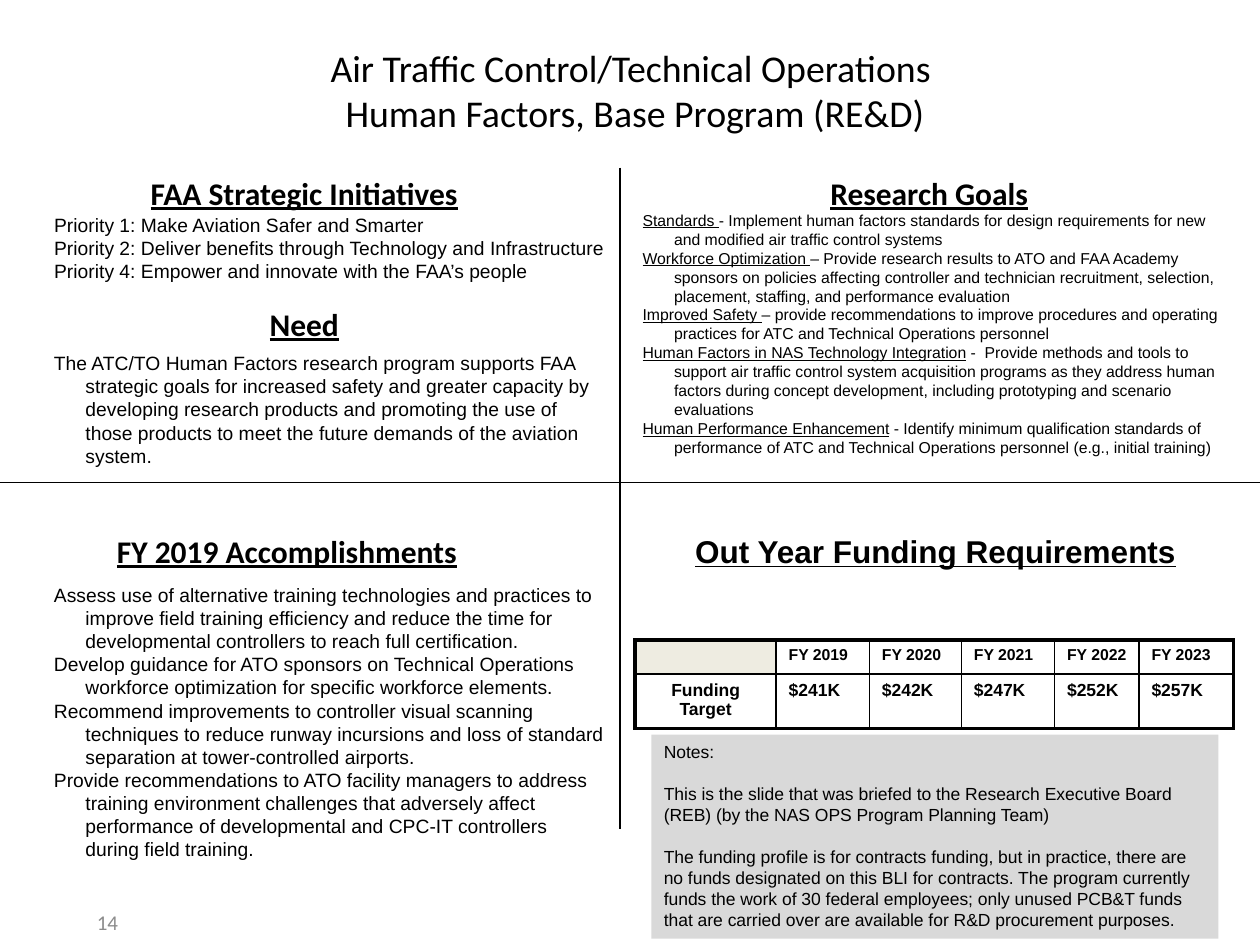
from lxml import etree
from pptx import Presentation
from pptx import util as u
from pptx.dml.color import RGBColor
from pptx.enum import shapes, text
from pptx.oxml.ns import qn

BLACK = "000000"
LEFT, CENTER = text.PP_ALIGN.LEFT, text.PP_ALIGN.CENTER
TOP, MIDDLE = text.MSO_ANCHOR.TOP, text.MSO_ANCHOR.MIDDLE

INITIATIVES = [
    "Priority 1: Make Aviation Safer and Smarter",
    "Priority 2: Deliver benefits through Technology and Infrastructure",
    "Priority 4: Empower and innovate with the FAA’s people",
]
NEED = [
    "The ATC/TO Human Factors research program supports FAA strategic goals for increased safety "
    "and greater capacity by developing research products and promoting the use of those products "
    "to meet the future demands of the aviation system.",
]
# Each goal is an underlined name and its description
GOALS = [
    ("Standards ", "- Implement human factors standards for design requirements for new and "
     "modified air traffic control systems"),
    ("Workforce Optimization ", "– Provide research results to ATO and FAA Academy sponsors on "
     "policies affecting controller and technician recruitment, selection, placement, staffing, "
     "and performance evaluation"),
    ("Improved Safety ", "– provide recommendations to improve procedures and operating practices "
     "for ATC and Technical Operations personnel"),
    ("Human Factors in NAS Technology Integration", " -  Provide methods and tools to support air "
     "traffic control system acquisition programs as they address human factors during concept "
     "development, including prototyping and scenario evaluations"),
    ("Human Performance Enhancement", " - Identify minimum qualification standards of performance "
     "of ATC and Technical Operations personnel (e.g., initial training)"),
]
ACCOMPLISHMENTS = [
    "Assess use of alternative training technologies and practices to improve field training "
    "efficiency and reduce the time for developmental controllers to reach full certification.",
    "Develop guidance for ATO sponsors on Technical Operations workforce optimization for specific "
    "workforce elements.",
    "Recommend improvements to controller visual scanning techniques to reduce runway incursions "
    "and loss of standard separation at tower-controlled airports.",
    "Provide recommendations to ATO facility managers to address training environment challenges "
    "that adversely affect performance of developmental and CPC-IT controllers during field "
    "training.",
]
NOTES = [
    "Notes:",
    "This is the slide that was briefed to the Research Executive Board (REB) (by the NAS OPS "
    "Program Planning Team)",
    "The funding profile is for contracts funding, but in practice, there are no funds designated "
    "on this BLI for contracts. The program currently funds the work of 30 federal employees; only "
    "unused PCB&T funds that are carried over are available for R&D procurement purposes.",
]
FUNDING = [
    ["", "FY 2019", "FY 2020", "FY 2021", "FY 2022", "FY 2023"],
    ["Funding Target", "$241K", "$242K", "$247K", "$252K", "$257K"],
]


def rgb(color):
    return RGBColor.from_string(color)


def place(shape, box):
    shape.left, shape.top, shape.width, shape.height = map(u.Inches, box)


def format_paragraph(paragraph, size, font="Arial", color=BLACK, bold=False, underline=None,
                     align=LEFT, hang=0, after=0):
    paragraph.alignment = align
    paragraph.line_spacing = 1.0
    paragraph.space_before, paragraph.space_after = u.Pt(0), u.Pt(after)
    paragraph.font.size, paragraph.font.name = u.Pt(size), font
    paragraph.font.bold, paragraph.font.underline = bold, underline
    paragraph.font.color.rgb = rgb(color)
    # Hanging indent without a bullet
    properties = paragraph._p.get_or_add_pPr()
    properties.set("marL", str(u.Inches(hang)))
    properties.set("indent", str(-u.Inches(hang)))
    etree.SubElement(properties, qn("a:buNone"))
    properties.append(properties.find(qn("a:defRPr")))  # the schema puts it after the bullet


def write(shape, box, paragraphs, size, anchor=TOP, **style):
    """Place a text shape and fill it; a tuple is an underlined lead and its plain text."""
    place(shape, box)
    frame = shape.text_frame
    frame.word_wrap, frame.vertical_anchor = True, anchor
    frame.auto_size = text.MSO_AUTO_SIZE.NONE
    for i, content in enumerate(paragraphs):
        paragraph = frame.add_paragraph() if i else frame.paragraphs[0]
        if isinstance(content, tuple):
            for j, part in enumerate(content):
                run = paragraph.add_run()
                run.text, run.font.underline = part, j == 0
        else:
            paragraph.text = content
        format_paragraph(paragraph, size, **style)


def add_text(slide, box, paragraphs, size, **style):
    write(slide.shapes.add_textbox(0, 0, 0, 0), box, paragraphs, size, **style)


def add_divider(slide, x1, y1, x2, y2):
    divider = slide.shapes.add_connector(shapes.MSO_CONNECTOR.STRAIGHT,
                                         *map(u.Inches, (x1, y1, x2, y2)))
    divider.line.color.rgb, divider.line.width = rgb(BLACK), u.Pt(0.75)
    etree.SubElement(divider._element.spPr, qn("a:effectLst"))


def set_borders(cell, widths):
    """Draw black borders, widths in points by side; they precede the fill in the XML."""
    properties = cell._tc.get_or_add_tcPr()
    for i, (side, width) in enumerate(widths.items()):
        line = etree.Element(qn(f"a:ln{side}"), w=str(u.Pt(width)))
        fill = etree.SubElement(line, qn("a:solidFill"))
        etree.SubElement(fill, qn("a:srgbClr"), val=BLACK)
        properties.insert(i, line)


def add_funding_table(slide):
    widths, heights = [1.12, 0.74, 0.73, 0.74, 0.67, 0.75], [0.27, 0.43]
    last_row, last_column = len(heights) - 1, len(widths) - 1
    box = map(u.Inches, (5.04, 5.08, sum(widths), sum(heights)))
    table = slide.shapes.add_table(len(heights), len(widths), *box).table
    for column, width in zip(table.columns, widths):
        column.width = u.Inches(width)
    for r, height in enumerate(heights):
        table.rows[r].height = u.Inches(height)
        for c, value in enumerate(FUNDING[r]):
            cell = table.cell(r, c)
            cell.text = value
            # A slim right margin keeps each year on one line
            cell.margin_left, cell.margin_right = u.Inches(0.1), u.Inches(0.03 if c else 0.1)
            format_paragraph(cell.text_frame.paragraphs[0], 10 if r else 9, bold=True,
                             align=LEFT if c else CENTER)
            if r == c == 0:
                cell.fill.solid()
                cell.fill.fore_color.rgb = rgb("EEECE1")
            else:
                cell.fill.background()
            # Heavy outer frame, thin inner grid
            outer = {"L": c == 0, "R": c == last_column, "T": r == 0, "B": r == last_row}
            set_borders(cell, {side: 2.25 if edge else 1 for side, edge in outer.items()})


def add_notes(slide):
    notes = slide.shapes.add_shape(shapes.MSO_SHAPE.RECTANGLE, 0, 0, 0, 0)
    notes.shadow.inherit = False
    notes.fill.solid()
    notes.fill.fore_color.rgb = rgb("D9D9D9")
    notes.line.fill.background()
    write(notes, (5.17, 5.83, 4.5, 1.62), NOTES, 10, after=12)


def main():
    prs = Presentation()
    prs.slide_width, prs.slide_height = u.Inches(10), u.Inches(7.5)
    slide = prs.slides.add_slide(prs.slide_layouts.get_by_name("Comparison"))
    holders = slide.placeholders
    heading = dict(size=18, font="Calibri", bold=True, underline=True, align=CENTER)

    write(slide.shapes.title, (0.25, 0.38, 9.58, 0.67),
          ["Air Traffic Control/Technical Operations \vHuman Factors, Base Program (RE&D)"],
          21.6, font="Calibri", anchor=MIDDLE, align=CENTER)

    # Quadrant dividers
    add_divider(slide, 4.92, 1.33, 4.92, 6.58)
    add_divider(slide, 0, 3.83, 10, 3.83)

    # Top left: initiatives and need
    write(holders[1], (0.5, 1.33, 3.83, 0.33), ["FAA Strategic Initiatives"], **heading)
    write(holders[2], (0.33, 1.64, 4.58, 0.66), INITIATIVES, 11)
    add_text(slide, (0.5, 2.37, 3.83, 0.33), ["Need"], **heading)
    add_text(slide, (0.33, 2.74, 4.58, 1.03), NEED, 11, hang=0.25)

    # Top right: goals
    write(holders[3], (5.25, 1.33, 4.25, 0.33), ["Research Goals"], **heading)
    write(holders[4], (5, 1.62, 4.83, 2.07), GOALS, 9, hang=0.25)

    # Bottom left: accomplishments
    add_text(slide, (0.83, 4.17, 4.17, 0.38), ["FY 2019 Accomplishments"],
             **{**heading, "align": LEFT})
    add_text(slide, (0.33, 4.58, 4.58, 2.32), ACCOMPLISHMENTS, 11, hang=0.25)

    # Bottom right: funding
    add_text(slide, (5.25, 4.17, 4.42, 0.54), [("Out Year Funding Requirements", " ")],
             **{**heading, "font": "Arial"})
    add_funding_table(slide)
    add_notes(slide)

    # Page number
    add_text(slide, (0.67, 7.12, 2.33, 0.4), ["14"], 12, font="Calibri", color="8C8C8C",
             anchor=MIDDLE)
    prs.save("out.pptx")


if __name__ == "__main__":
    main()
